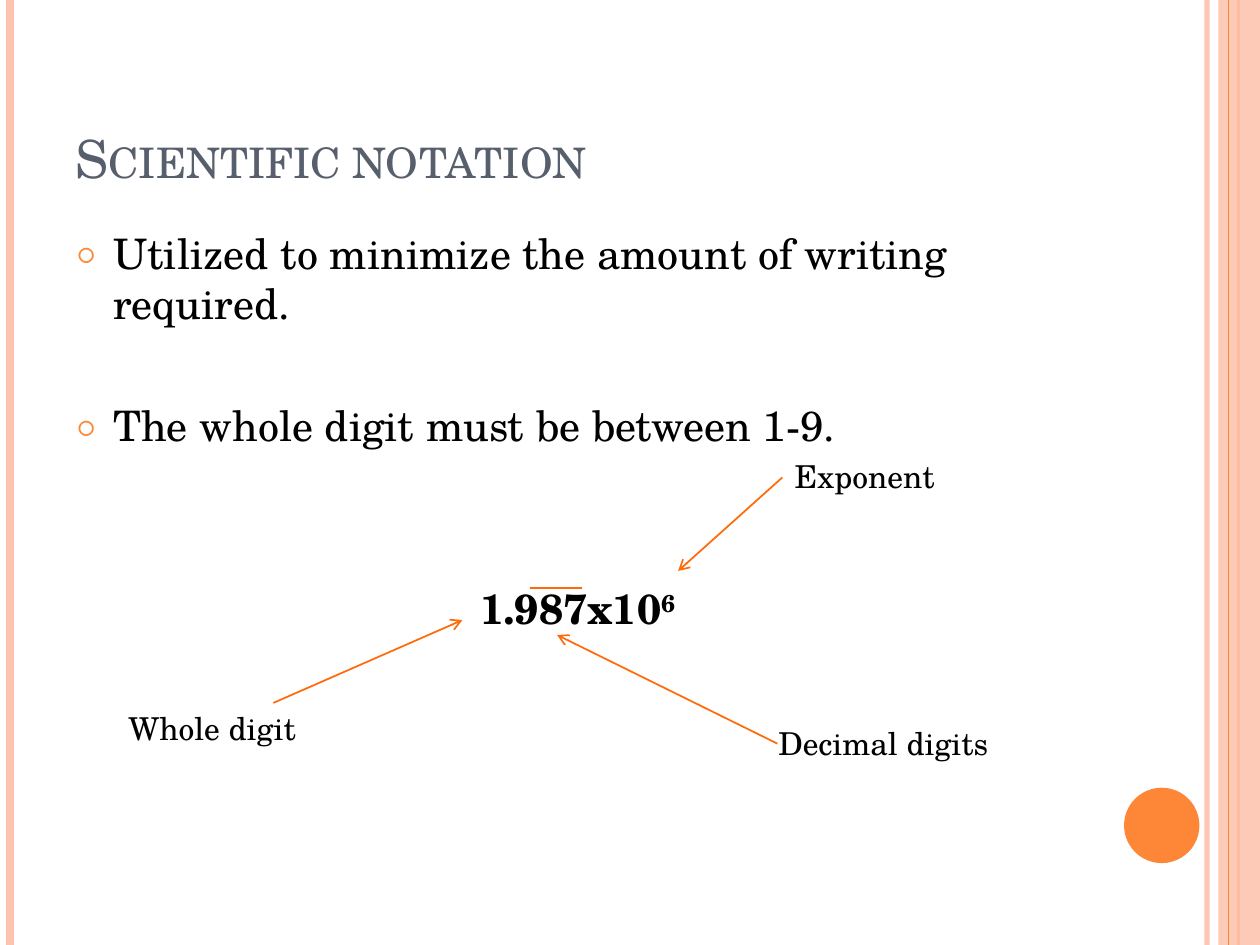
from lxml.etree import SubElement
from pptx import Presentation
from pptx.dml.color import RGBColor
from pptx.enum.shapes import MSO_CONNECTOR, MSO_SHAPE
from pptx.enum.text import MSO_ANCHOR, MSO_AUTO_SIZE, PP_ALIGN
from pptx.oxml.ns import qn
from pptx.util import Cm, Pt

COLOURS = {"pale": "FEC3AE", "orange": "FE8637", "arrow": "FF6B0A",
           "title": "575F6D", "text": "000000"}
FONT = "TeX Gyre Schola"
SLIDE_WIDTH, SLIDE_HEIGHT = 25.4, 19.05

TITLE = "Scientific notation"
BULLETS = [("Utilized to minimize the amount of writing required.", 6),
           ("The whole digit must be between 1-9.", 41)]
FORMULA = [("1.987x10", None), ("6", "30000")]
FORMULA_SPACE = 76

TITLE_BOX = (1.27, 0.76, 20.75, 3.18)
BODY_BOX = (1.27, 4.45, 20.75, 13.54)
LABELS = {
    "Whole digit": (2.34, 14.17, 5.51, 1.02),
    "Exponent": (15.77, 9.09, 4.65, 1.07),
    "Decimal digits": (15.44, 14.48, 5.28, 1.02),
}
RULES = [(24.33, "pale", 3, 93), (0.2, "pale", 4.5, 100),
         (24.97, "orange", 1.5, 100), (24.77, "orange", 0.75, 100)]
BAND = (MSO_SHAPE.RECTANGLE, (24.56, 0, 0.84, SLIDE_HEIGHT), "pale", 87)
DISC = (MSO_SHAPE.OVAL, (22.66, 15.88, 1.52, 1.52), "orange", 100)
POINTERS = [
    ((15.77, 9.63), (13.67, 11.51), "Exponent"),
    ((15.67, 14.99), (11.23, 12.8), None),
    ((5.51, 14.17), (9.32, 12.5), None),
]
DECIMAL_BAR = ((10.69, 11.86), (11.73, 11.86))


def colour(name):
    return RGBColor.from_string(COLOURS[name])


def apply_format(target, values):
    for name, value in values.items():
        setattr(target, name, value)


def place(shape, box):
    names = ("left", "top", "width", "height")
    apply_format(shape, dict(zip(names, map(Cm, box))))


def set_alpha(element, percent):
    if percent < 100:
        SubElement(next(element.iter(qn("a:srgbClr"))), qn("a:alpha"),
                   val=str(percent * 1000))


def add_run(paragraph, text, size, name="text", bold=False):
    run = paragraph.add_run()
    run.text = text
    apply_format(run.font, {"name": FONT, "size": Pt(size), "bold": bold})
    run.font.color.rgb = colour(name)
    return run


def add_line(slide, start, end, name, width, alpha=100, arrow=False):
    line = slide.shapes.add_connector(MSO_CONNECTOR.STRAIGHT,
                                      *map(Cm, start + end))
    line.line.width = Pt(width)
    line.line.color.rgb = colour(name)
    properties = line._element.spPr
    set_alpha(properties, alpha)
    if arrow:
        SubElement(line.line._ln, qn("a:tailEnd"), type="arrow")
    SubElement(properties, qn("a:effectLst"))
    return line


def add_solid(slide, kind, box, name, alpha):
    shape = slide.shapes.add_shape(kind, *map(Cm, box))
    shape.shadow.inherit = False
    shape.fill.solid()
    shape.fill.fore_color.rgb = colour(name)
    shape.line.fill.background()
    set_alpha(shape._element.spPr, alpha)


def set_bullet(paragraph):
    properties = paragraph._p.get_or_add_pPr()
    properties.set("marL", str(Cm(0.76)))
    properties.set("indent", str(-Cm(0.76)))
    bullet_colour = SubElement(properties, qn("a:buClr"))
    SubElement(bullet_colour, qn("a:srgbClr"), val=COLOURS["orange"])
    SubElement(properties, qn("a:buSzPct"), val="70000")
    SubElement(properties, qn("a:buFont"), typeface=FONT)
    SubElement(properties, qn("a:buChar"), char="○")


def fill_title(title):
    place(title, TITLE_BOX)
    apply_format(title.text_frame, {"vertical_anchor": MSO_ANCHOR.BOTTOM,
                                    "auto_size": MSO_AUTO_SIZE.NONE})
    paragraph = title.text_frame.paragraphs[0]
    paragraph.alignment = PP_ALIGN.LEFT
    run = add_run(paragraph, TITLE, 30, "title")
    run.font._element.set("cap", "small")


def fill_body(body):
    place(body, BODY_BOX)
    frame = body.text_frame
    apply_format(frame, {"vertical_anchor": MSO_ANCHOR.TOP,
                         "auto_size": MSO_AUTO_SIZE.NONE})
    paragraph = frame.paragraphs[0]
    for text, space in BULLETS:
        apply_format(paragraph, {"space_before": Pt(space),
                                 "alignment": PP_ALIGN.LEFT})
        set_bullet(paragraph)
        add_run(paragraph, text, 24)
        paragraph = frame.add_paragraph()
    apply_format(paragraph, {"space_before": Pt(FORMULA_SPACE),
                             "alignment": PP_ALIGN.CENTER})
    properties = paragraph._p.get_or_add_pPr()
    properties.set("marL", "0")
    properties.set("indent", "0")
    SubElement(properties, qn("a:buNone"))
    for text, baseline in FORMULA:
        run = add_run(paragraph, text, 24, bold=True)
        if baseline:
            run.font._element.set("baseline", baseline)


def add_label(slide, text, box):
    label = slide.shapes.add_textbox(*map(Cm, box))
    apply_format(label.text_frame, {"word_wrap": True,
                                    "auto_size": MSO_AUTO_SIZE.SHAPE_TO_FIT_TEXT})
    add_run(label.text_frame.paragraphs[0], text, 18)
    return label


def main():
    presentation = Presentation()
    apply_format(presentation, {"slide_width": Cm(SLIDE_WIDTH),
                                "slide_height": Cm(SLIDE_HEIGHT)})
    slide = presentation.slides.add_slide(presentation.slide_layouts[1])
    fill_title(slide.shapes.title)
    fill_body(slide.placeholders[1])

    for index, (x, name, width, alpha) in enumerate(RULES):
        if index == len(RULES) - 1:
            add_solid(slide, *BAND)
        add_line(slide, (x, 0), (x, SLIDE_HEIGHT), name, width, alpha)
    add_solid(slide, *DISC)

    labels = {text: add_label(slide, text, box) for text, box in LABELS.items()}
    for start, end, source in POINTERS:
        pointer = add_line(slide, start, end, "arrow", 1, arrow=True)
        if source:
            pointer.begin_connect(labels[source], 1)
    add_line(slide, *DECIMAL_BAR, "arrow", 1)
    presentation.save("out.pptx")


if __name__ == "__main__":
    main()
